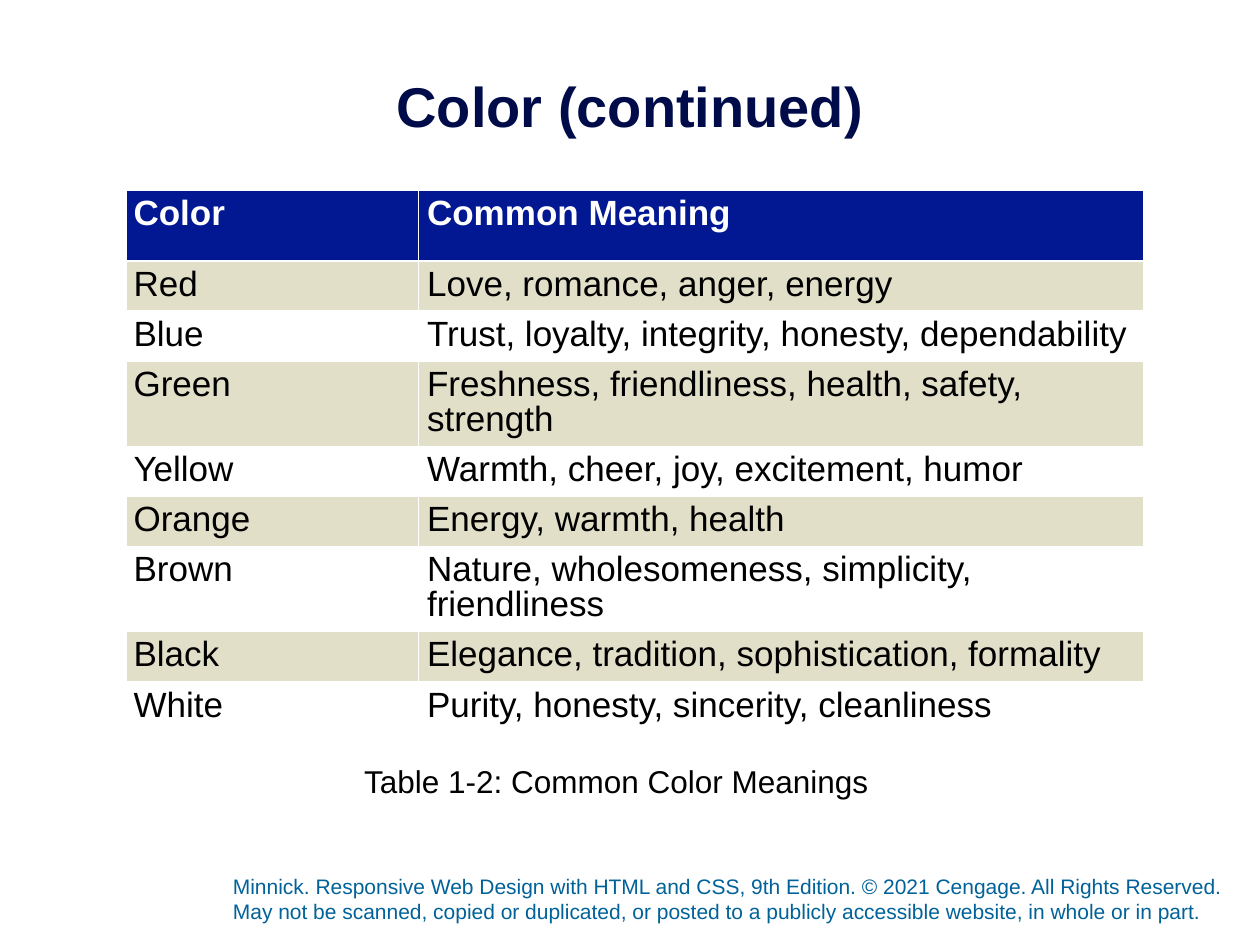
from pptx import Presentation
from pptx.dml.color import RGBColor
from pptx.enum.text import MSO_ANCHOR, PP_ALIGN
from pptx.util import Inches, Pt

LEFT, CENTER = PP_ALIGN.LEFT, PP_ALIGN.CENTER
TOP, MIDDLE = MSO_ANCHOR.TOP, MSO_ANCHOR.MIDDLE

NAVY = RGBColor(0x00, 0x0C, 0x49)
BLUE = RGBColor(0x01, 0x18, 0x92)
SAND = RGBColor(0xE2, 0xDF, 0xC9)
TEAL = RGBColor(0x00, 0x62, 0x98)
WHITE = RGBColor(0xFF, 0xFF, 0xFF)
BLACK = RGBColor(0x00, 0x00, 0x00)

FONT = "Arial"
COLUMNS = (2.32, 5.76)
HEADER_HEIGHT, ROW_HEIGHT = 0.56, 0.36
MEANINGS = (
    ("Color", "Common Meaning"),
    ("Red", "Love, romance, anger, energy"),
    ("Blue", "Trust, loyalty, integrity, honesty, dependability"),
    ("Green", "Freshness, friendliness, health, safety, strength"),
    ("Yellow", "Warmth, cheer, joy, excitement, humor"),
    ("Orange", "Energy, warmth, health"),
    ("Brown", "Nature, wholesomeness, simplicity, friendliness"),
    ("Black", "Elegance, tradition, sophistication, formality"),
    ("White", "Purity, honesty, sincerity, cleanliness"),
)
COPYRIGHT = (
    "Minnick. Responsive Web Design with HTML and CSS, 9th Edition. "
    "© 2021 Cengage. All Rights Reserved. May not be scanned, copied or "
    "duplicated, or posted to a publicly accessible website, in whole or in part."
)


def set_font(para, size, color, bold=False):
    para.font.name = FONT
    para.font.size = Pt(size)
    para.font.bold = bold
    para.font.color.rgb = color


def set_margins(holder, left, top, right, bottom):
    holder.margin_left, holder.margin_top = Inches(left), Inches(top)
    holder.margin_right, holder.margin_bottom = Inches(right), Inches(bottom)


def add_text(page, place, text, size, color, bold=False, align=LEFT,
             anchor=TOP, margins=(0, 0, 0, 0), spacing=0.9):
    box = page.shapes.add_textbox(*map(Inches, place))
    frame = box.text_frame
    frame.word_wrap = True
    frame.vertical_anchor = anchor
    set_margins(frame, *margins)
    para = frame.paragraphs[0]
    para.text = text
    para.alignment = align
    para.line_spacing = spacing
    set_font(para, size, color, bold)


def fill_cell(cell, text, row, column):
    header = row == 0
    if header or row % 2:
        cell.fill.solid()
        cell.fill.fore_color.rgb = BLUE if header else SAND
    else:
        cell.fill.background()
    set_margins(cell, 0.07 if column else 0.06, 0.06, 0.07, 0.06)
    para = cell.text_frame.paragraphs[0]
    para.text = text
    para.line_spacing = Pt(20)
    if header:
        para.space_after = Pt(8)
    set_font(para, 20, WHITE if header else BLACK, header)


def add_meanings_table(page, left, top):
    height = HEADER_HEIGHT + ROW_HEIGHT * (len(MEANINGS) - 1)
    frame = page.shapes.add_table(
        len(MEANINGS), len(COLUMNS), Inches(left), Inches(top),
        Inches(sum(COLUMNS)), Inches(height))
    table = frame.table
    table.horz_banding = False
    for column, width in zip(table.columns, COLUMNS):
        column.width = Inches(width)
    for row, texts in enumerate(MEANINGS):
        table.rows[row].height = Inches(ROW_HEIGHT if row else HEADER_HEIGHT)
        for column, text in enumerate(texts):
            fill_cell(table.cell(row, column), text, row, column)


def main():
    deck = Presentation()
    deck.slide_width, deck.slide_height = Inches(10), Inches(7.5)
    page = deck.slides.add_slide(deck.slide_layouts[6])
    add_text(page, (0.69, 0.17, 8.62, 1), "Color (continued)", 32, NAVY,
             bold=True, align=CENTER, margins=(0, 0.46, 0, 0))
    add_meanings_table(page, 1, 1.51)
    add_text(page, (2.89, 6.08, 4.31, 0.4),
             "Table 1-2: Common Color Meanings", 18, BLACK)
    add_text(page, (1.75, 6.93, 8.08, 0.4), COPYRIGHT, 12, TEAL,
             anchor=MIDDLE, margins=(0.1, 0.05, 0.1, 0.05), spacing=1.0)
    deck.save("out.pptx")


if __name__ == "__main__":
    main()
